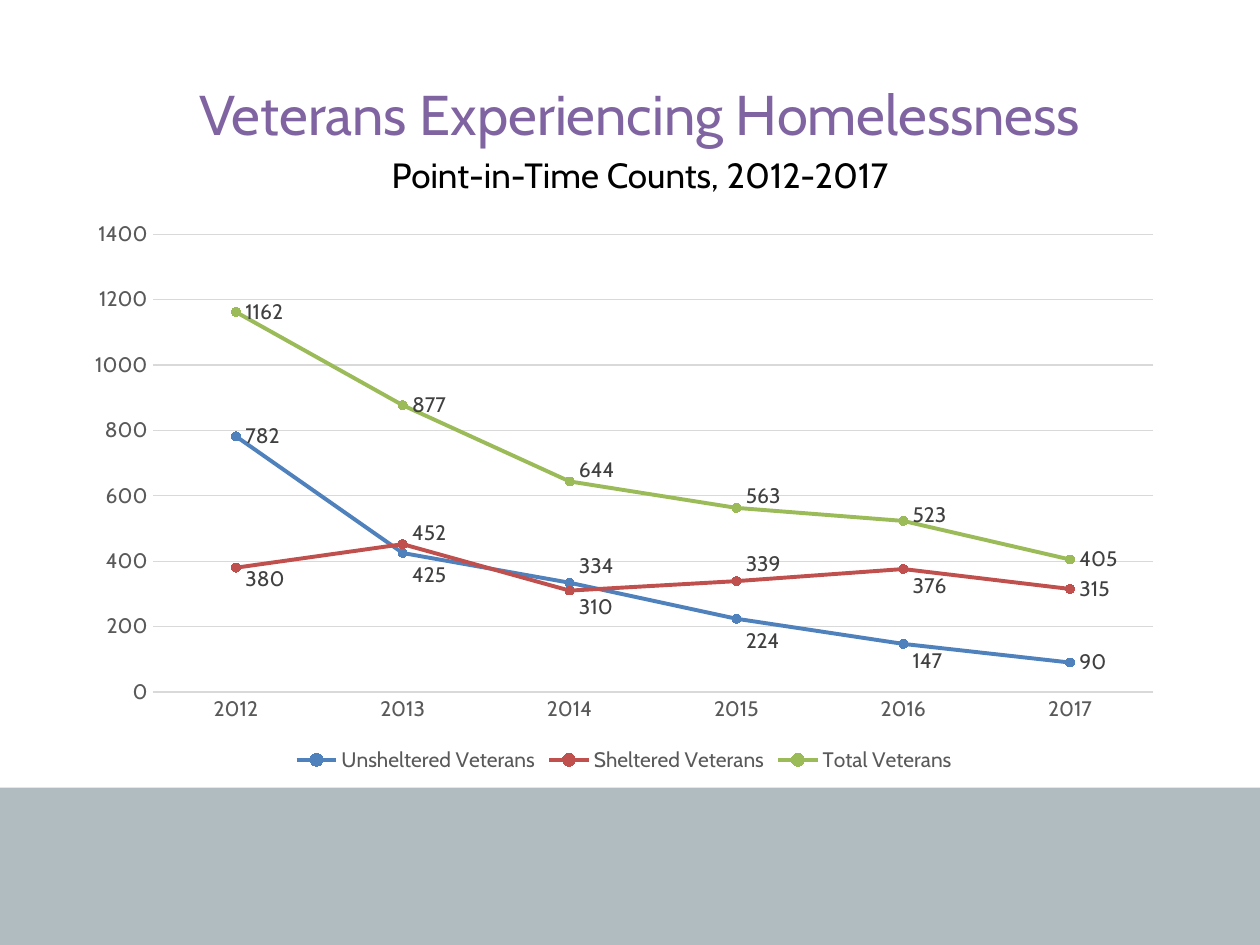
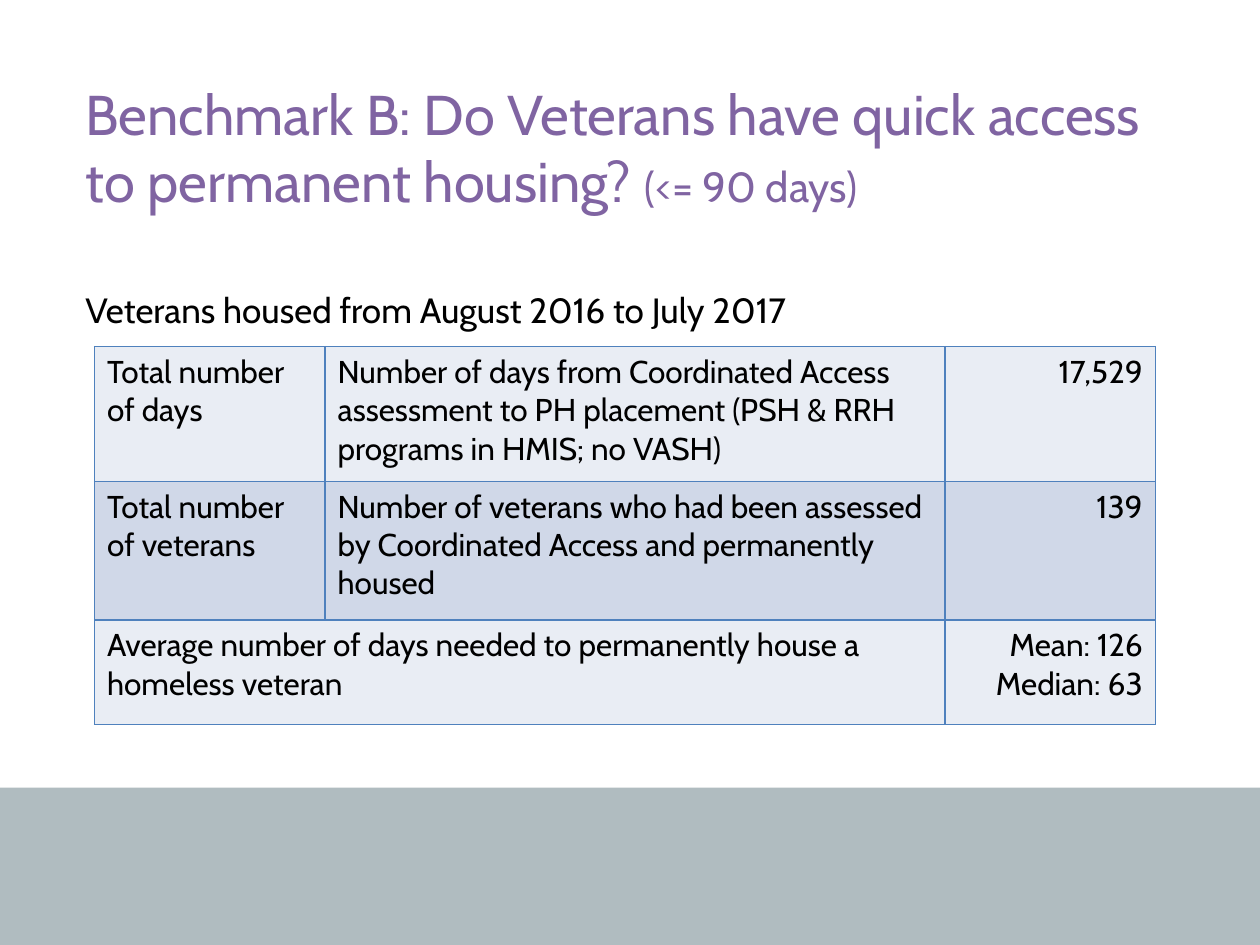
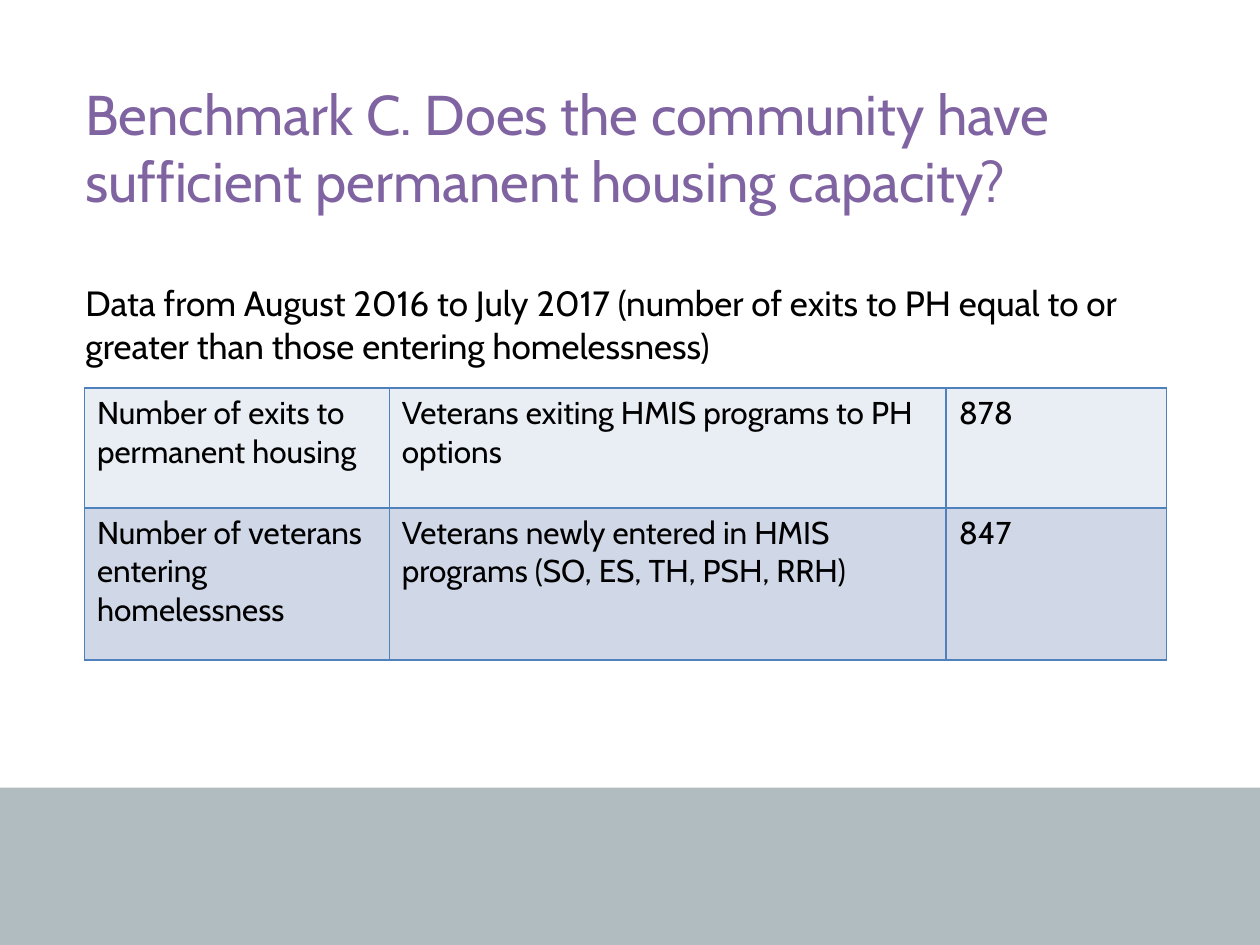
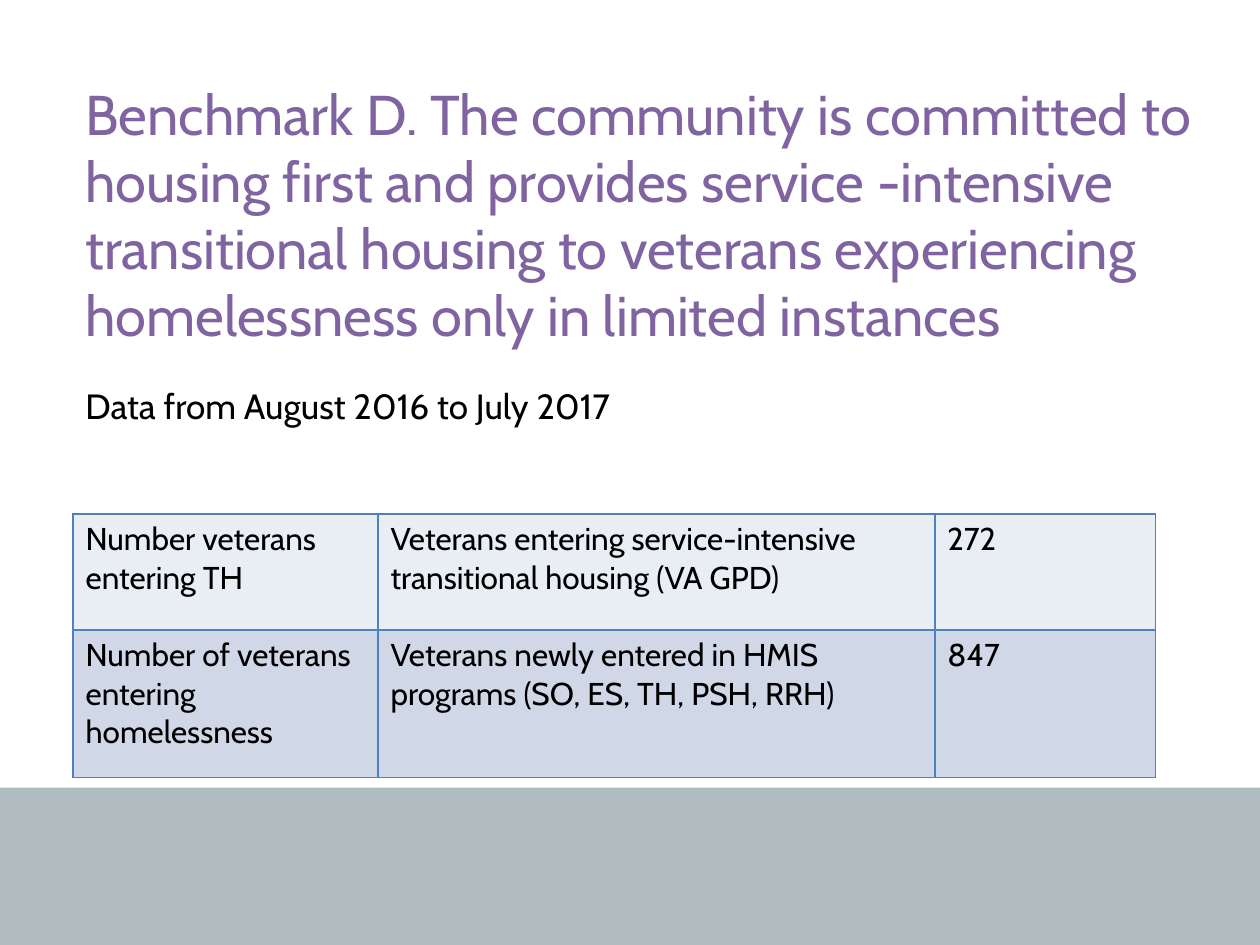
from dataclasses import dataclass

from lxml.etree import SubElement
from pptx import Presentation
from pptx.chart.data import CategoryChartData
from pptx.dml.color import RGBColor
from pptx.enum.chart import XL_CHART_TYPE, XL_LABEL_POSITION, XL_LEGEND_POSITION, XL_MARKER_STYLE, XL_TICK_MARK
from pptx.enum.shapes import MSO_SHAPE
from pptx.enum.text import PP_ALIGN
from pptx.oxml import parse_xml
from pptx.oxml.ns import nsdecls, qn
from pptx.slide import Slide
from pptx.table import _Cell
from pptx.text.text import Font
from pptx.util import Inches, Pt

FONT = "Cabin"
PURPLE = "8064A2"
BLACK = "000000"
BAND = "B0BCC0"
BLUE = "4F81BD"
RED = "C0504D"
GREEN = "9BBB59"
ROW_FILLS = ("E9EDF4", "D0D8E8")
AXIS_TEXT = "595959"
LABEL_TEXT = "404040"
GRID = "D9D9D9"


@dataclass(frozen=True)
class Heading:
    title: str
    subtitle: str
    gap: float
    note: str = ""
    align: PP_ALIGN = PP_ALIGN.LEFT


@dataclass(frozen=True)
class DataTable:
    left: float
    top: float
    column_widths: tuple[float, ...]
    row_heights: tuple[float, ...]
    rows: tuple[tuple[str, str, str], ...]
    number_align: PP_ALIGN = PP_ALIGN.LEFT


@dataclass(frozen=True)
class CountLine:
    name: str
    values: tuple[int, ...]
    color: str
    label_shifts: dict[int, float]


YEARS = ("2012", "2013", "2014", "2015", "2016", "2017")
COUNT_LINES = (
    CountLine("Unsheltered Veterans", (782, 425, 334, 224, 147, 90), BLUE,
              {1: 0.04, 2: -0.03, 3: 0.04, 4: 0.03}),
    CountLine("Sheltered Veterans", (380, 452, 310, 339, 376, 315), RED,
              {0: 0.02, 1: -0.02, 2: 0.03, 3: -0.03, 4: 0.03}),
    CountLine("Total Veterans", (1162, 877, 644, 563, 523, 405), GREEN,
              {2: -0.02, 3: -0.02, 4: -0.01}),
)
COUNTS_HEADING = Heading("Veterans Experiencing Homelessness", "Point-in-Time Counts, 2012-2017", 4,
                         align=PP_ALIGN.CENTER)

ENTERING_ROW = (
    "Number of veterans entering homelessness",
    "Veterans newly entered in HMIS programs (SO, ES, TH, PSH, RRH)",
    "847",
)
CAPACITY_WIDTHS = (2.42, 4.42, 1.75)
BENCHMARKS = (
    (
        Heading("Benchmark B: Do Veterans have quick access to permanent housing? ",
                "Veterans housed from August 2016 to July 2017", 43, note="(<= 90 days)"),
        DataTable(0.75, 2.75, (1.83, 4.92, 1.67), (1.07, 1.1, 0.83), (
            ("Total number of days",
             "Number of days from Coordinated Access assessment to PH placement "
             "(PSH & RRH programs in HMIS; no VASH)", "17,529"),
            ("Total number of veterans",
             "Number of veterans who had been assessed by Coordinated Access and permanently housed", "139"),
            ("Average number of days needed to permanently house a homeless veteran",
             "", "Mean: 126\nMedian: 63"),
        ), PP_ALIGN.RIGHT),
    ),
    (
        Heading("Benchmark C. Does the community have sufficient permanent housing capacity?",
                "Data from August 2016 to July 2017 (number of exits to PH equal to or greater "
                "than those entering homelessness)", 39),
        DataTable(0.67, 3.08, CAPACITY_WIDTHS, (0.95, 1.21), (
            ("Number of exits to permanent housing", "Veterans exiting HMIS programs to PH options", "878"),
            ENTERING_ROW,
        )),
    ),
    (
        Heading("Benchmark D. The community is committed to housing first and provides service "
                "-intensive transitional housing to veterans experiencing homelessness only in "
                "limited instances", "Data from August 2016 to July 2017", 21),
        DataTable(0.58, 4.08, CAPACITY_WIDTHS, (0.92, 1.17), (
            ("Number veterans entering TH",
             "Veterans entering service-intensive transitional housing (VA GPD)", "272"),
            ENTERING_ROW,
        )),
    ),
)


def rgb(value: str) -> RGBColor:
    return RGBColor.from_string(value)


def style_font(font: Font, size: float, color: str) -> None:
    font.name = FONT
    font.size = Pt(size)
    font.color.rgb = rgb(color)


def add_base_slide(presentation: Presentation, heading: Heading) -> Slide:
    slide = presentation.slides.add_slide(presentation.slide_layouts[6])
    band = slide.shapes.add_shape(MSO_SHAPE.RECTANGLE, 0, Inches(6.25), Inches(10), Inches(1.25))
    band.shadow.inherit = False
    band.fill.solid()
    band.fill.fore_color.rgb = rgb(BAND)
    band.line.fill.background()

    box = slide.shapes.add_textbox(Inches(0.58), Inches(0.58), Inches(9), Inches(5.58))
    text_frame = box.text_frame
    text_frame.word_wrap = True
    title = text_frame.paragraphs[0]
    title.text = heading.title
    title.alignment = heading.align
    style_font(title.runs[0].font, 32, PURPLE)
    if heading.note:
        note = title.add_run()
        note.text = heading.note
        style_font(note.font, 24, PURPLE)
    subtitle = text_frame.add_paragraph()
    subtitle.text = heading.subtitle
    subtitle.alignment = heading.align
    subtitle.space_before = Pt(heading.gap)
    style_font(subtitle.runs[0].font, 20, BLACK)
    return slide


def set_borders(cell: _Cell) -> None:
    properties = cell._tc.get_or_add_tcPr()
    for index, side in enumerate(("lnL", "lnR", "lnT", "lnB")):
        border = parse_xml(
            f'<a:{side} {nsdecls("a")} w="{Pt(1)}"><a:solidFill>'
            f'<a:srgbClr val="{BLUE}"/></a:solidFill></a:{side}>'
        )
        properties.insert(index, border)


def add_data_table(slide: Slide, data: DataTable) -> None:
    frame = slide.shapes.add_table(
        len(data.rows), len(data.column_widths), Inches(data.left), Inches(data.top),
        Inches(sum(data.column_widths)), Inches(sum(data.row_heights)),
    )
    table = frame.table
    table.first_row = False
    table.horz_banding = False
    for column, width in zip(table.columns, data.column_widths):
        column.width = Inches(width)
    for row_index, texts in enumerate(data.rows):
        table.rows[row_index].height = Inches(data.row_heights[row_index])
        for column_index, text in enumerate(texts):
            cell = table.cell(row_index, column_index)
            cell.fill.solid()
            cell.fill.fore_color.rgb = rgb(ROW_FILLS[row_index % 2])
            set_borders(cell)
            if not text:
                table.cell(row_index, column_index - 1).merge(cell)
                continue
            cell.text_frame.text = text
            for paragraph in cell.text_frame.paragraphs:
                if column_index == len(texts) - 1:
                    paragraph.alignment = data.number_align
                style_font(paragraph.runs[0].font, 18, BLACK)


def add_counts_chart(slide: Slide) -> None:
    chart_data = CategoryChartData()
    chart_data.categories = YEARS
    for count_line in COUNT_LINES:
        chart_data.add_series(count_line.name, count_line.values)
    chart = slide.shapes.add_chart(
        XL_CHART_TYPE.LINE_MARKERS, Inches(0.58), Inches(1.67), Inches(8.75), Inches(4.5), chart_data
    ).chart
    style_font(chart.font, 10, BLACK)
    chart.has_title = False
    chart.has_legend = True
    chart.legend.position = XL_LEGEND_POSITION.BOTTOM
    chart.legend.include_in_layout = False
    style_font(chart.legend.font, 12, AXIS_TEXT)

    for axis in (chart.category_axis, chart.value_axis):
        axis.major_tick_mark = XL_TICK_MARK.NONE
        axis.minor_tick_mark = XL_TICK_MARK.NONE
        style_font(axis.tick_labels.font, 12, AXIS_TEXT)
    chart.value_axis.minimum_scale = 0
    chart.value_axis.maximum_scale = 1400
    chart.value_axis.major_unit = 200
    chart.value_axis.format.line.fill.background()
    chart.value_axis.has_major_gridlines = True
    for line in (chart.category_axis.format.line, chart.value_axis.major_gridlines.format.line):
        line.color.rgb = rgb(GRID)
        line.width = Pt(0.75)

    plot = chart.plots[0]
    plot.vary_by_categories = False
    series_elements = chart.element.xpath(".//c:ser")
    for series, element, count_line in zip(plot.series, series_elements, COUNT_LINES):
        color = rgb(count_line.color)
        series.smooth = False
        series.format.line.color.rgb = color
        series.format.line.width = Pt(2.25)
        series.marker.style = XL_MARKER_STYLE.CIRCLE
        series.marker.size = 5
        series.marker.format.fill.solid()
        series.marker.format.fill.fore_color.rgb = color
        series.marker.format.line.color.rgb = color
        labels = series.data_labels
        labels.show_value = True
        labels.position = XL_LABEL_POSITION.RIGHT
        style_font(labels.font, 12, LABEL_TEXT)
        for index, shift in count_line.label_shifts.items():
            label = series.points[index].data_label
            label.position = XL_LABEL_POSITION.RIGHT
            style_font(label.font, 12, LABEL_TEXT)
            label_element = element.xpath(f'.//c:dLbl[c:idx/@val="{index}"]')[0]
            layout = parse_xml(f'<c:layout {nsdecls("c")}/>')
            manual_layout = SubElement(layout, qn("c:manualLayout"))
            SubElement(manual_layout, qn("c:x"), val="0")
            SubElement(manual_layout, qn("c:y"), val=str(shift))
            label_element.insert(1, layout)


def main() -> None:
    presentation = Presentation()
    presentation.slide_width = Inches(10)
    presentation.slide_height = Inches(7.5)
    add_counts_chart(add_base_slide(presentation, COUNTS_HEADING))
    for heading, data in BENCHMARKS:
        add_data_table(add_base_slide(presentation, heading), data)
    presentation.save("out.pptx")


if __name__ == "__main__":
    main()
